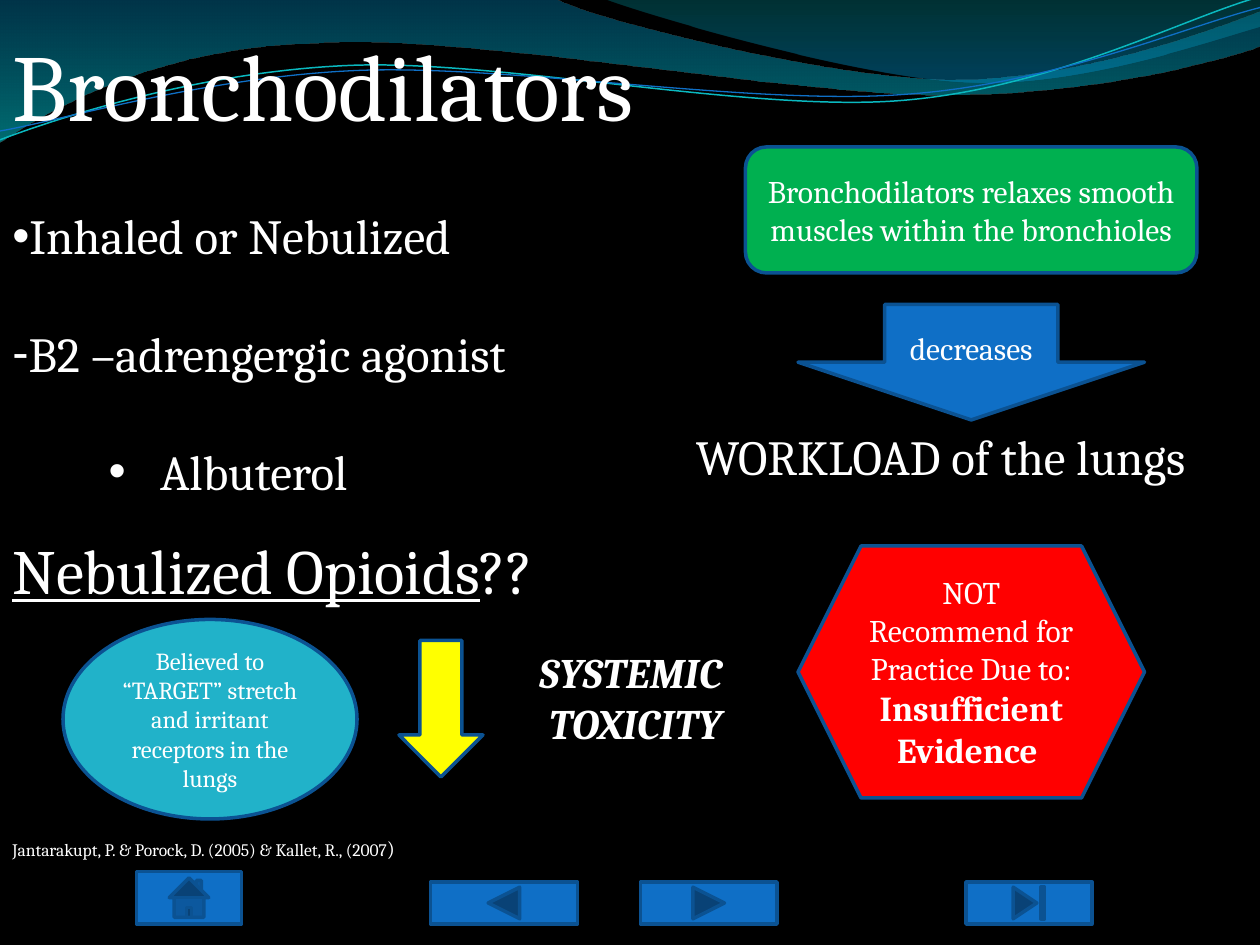
from dataclasses import dataclass
from typing import NamedTuple, Optional

import pptx
import pptx.dml.color
import pptx.enum.shapes
import pptx.enum.text
import pptx.oxml
import pptx.oxml.ns
import pptx.util

SHAPE = pptx.enum.shapes.MSO_SHAPE
ALIGN = pptx.enum.text.PP_ALIGN
ANCHOR = pptx.enum.text.MSO_ANCHOR
FIT = pptx.enum.text.MSO_AUTO_SIZE
COLUMNS, ROWS = 120, 90
CELL = pptx.util.Inches(10) // COLUMNS


@dataclass(frozen=True)
class Theme:
    font: str = "Cambria"
    background: str = "000000"
    text: str = "FFFFFF"
    blue: str = "0F6FC6"
    outline: str = "0B5292"
    teal: str = "21B2C9"
    yellow: str = "FFFF00"
    red: str = "FF0000"
    green: str = "00B050"
    aqua: str = "0AB8BF"
    title: int = 54
    heading: int = 36
    body: int = 28
    callout: int = 24
    strong: int = 20
    label: int = 18
    note: int = 14
    bracket: int = 12
    citation: int = 10


THEME = Theme()


class Box(NamedTuple):
    """Left, top, width and height in grid cells."""
    column: float
    row: float
    columns: float
    rows: float

    def emu(self) -> list[int]:
        return [round(cells * CELL) for cells in self]


class Run(NamedTuple):
    text: str
    size: int
    bold: bool = False
    italic: bool = False
    underline: bool = False


class Bullet(NamedTuple):
    """Bullet character with margin, hanging indent and gap above, in points."""
    char: str
    margin: float = 0
    hanging: float = 0
    gap: float = 0


class Line(NamedTuple):
    runs: list[Run]
    align: ALIGN = ALIGN.LEFT
    bullet: Optional[Bullet] = None


class Figure(NamedTuple):
    preset: SHAPE
    box: Box
    fill: str
    lines: list[Line] = []


class Note(NamedTuple):
    box: Box
    lines: list[Line]
    wrap: bool = False


class Stop(NamedTuple):
    position: int
    color: str
    opacity: int


class Wave(NamedTuple):
    """Points in inches: a start, then 2-tuples for lines and 6-tuples for Bezier curves."""
    start: tuple
    segments: list[tuple]
    stops: list[Stop] = []
    line: str = ""
    weight: float = 0


WAVES = [
    Wave((0, 0), [(4.4, -.01), (4.76, .17, 6.64, .63, 7.58, .63), (8.53, .63, 9.58, .26, 10, .09),
                  (10.01, .36), (9.83, .44, 8.7, .76, 7.46, .75), (6.22, .75, 3.82, .28, 2.57, .34),
                  (1.29, .36, .46, .83, -.01, 1.13), (0, 0)],
         [Stop(0, "0074A1", 45), Stop(100, "00C6CF", 55)]),
    Wave((4.79, -.01), [(5.09, .11, 6.82, .62, 7.69, .65), (8.56, .69, 9.61, .32, 10, .21),
                        (10, 0), (4.79, -.01)],
         [Stop(0, "00A1A9", 30), Stop(80, "008BBF", 45)]),
    Wave((0, 1.11), [(.48, .93, 1.58, .57, 2.77, .52), (3.95, .47, 5.93, .89, 7.13, .8),
                     (8.33, .71, 9.38, .15, 9.98, -.02)], line=THEME.aqua, weight=.85),
    Wave((0, 1.04), [(.47, .96, 1.64, .61, 2.83, .56), (4.03, .51, 5.97, .84, 7.17, .75),
                     (8.36, .67, 9.41, .21, 10, .06)], line=THEME.blue, weight=.75),
]


def centred(text: str, size: int, bold: bool = False, italic: bool = False) -> Line:
    return Line([Run(text, size, bold, italic)], ALIGN.CENTER)


BUTTONS = [
    Figure(SHAPE.ACTION_BUTTON_BACK_OR_PREVIOUS, Box(41, 84, 14, 4), THEME.blue),
    Figure(SHAPE.ACTION_BUTTON_FORWARD_OR_NEXT, Box(61, 84, 13, 4), THEME.blue),
    Figure(SHAPE.ACTION_BUTTON_END, Box(92, 84, 12, 4), THEME.blue),
    Figure(SHAPE.ACTION_BUTTON_HOME, Box(13, 83, 10, 5), THEME.blue),
]
TITLE = Note(Box(0, 2, 65.6, 12.1), [Line([Run("Bronchodilators", THEME.title)])])
CONTENT = [
    Note(Box(0, 19, 53, 40.8), [
        Line([Run("Inhaled or Nebulized", THEME.body)], bullet=Bullet("•")),
        Line([Run("B2 –adrengergic agonist", THEME.body)], bullet=Bullet("-", gap=33.7)),
        Line([Run("Albuterol", THEME.body)], bullet=Bullet("•", 84.5, 29.5, 33.7))], wrap=True),
    Figure(SHAPE.DOWN_ARROW, Box(76, 29, 33, 11), THEME.blue, [centred("decreases", THEME.label)]),
    Note(Box(65.1, 40, 54.9, 6.9), [Line([Run("WORKLOAD of the lungs", THEME.body)])]),
    Note(Box(0, 50, 56.9, 8.5), [Line([Run("Nebulized Opioids", THEME.heading, underline=True),
                                       Run("??", THEME.heading)])]),
    Figure(SHAPE.OVAL, Box(6, 59, 28, 19), THEME.teal,
           [centred("Believed to “TARGET” stretch and irritant receptors in the lungs", THEME.note)]),
    Figure(SHAPE.DOWN_ARROW, Box(38, 61, 8, 13), THEME.yellow),
    Note(Box(49, 61, 23, 10.9), [centred(word, THEME.callout, bold=True, italic=True)
                                 for word in ("SYSTEMIC ", "TOXICITY")]),
    Note(Box(0, 79, 42.1, 3.6), [
        Line([Run("Jantarakupt, P. & Porock, D. (2005) & Kallet, R., (2007", THEME.citation),
              Run(")", THEME.bracket)])]),
    Figure(SHAPE.HEXAGON, Box(76, 52, 33, 24), THEME.red,
           [centred("NOT Recommend for Practice Due to:", THEME.label),
            centred("Insufficient Evidence ", THEME.strong, bold=True)]),
    Figure(SHAPE.ROUNDED_RECTANGLE, Box(71, 14, 43, 12), THEME.green,
           [centred("Bronchodilators relaxes smooth muscles within the bronchioles", THEME.label)]),
]


def rgb(color: str) -> pptx.dml.color.RGBColor:
    return pptx.dml.color.RGBColor.from_string(color)


def xml(tag: str, attributes: str = "", content: str = ""):
    return pptx.oxml.parse_xml(
        f'<a:{tag} {pptx.oxml.ns.nsdecls("a")} {attributes}>{content}</a:{tag}>')


def add_bullet(paragraph, bullet: Bullet) -> None:
    paragraph.space_before = pptx.util.Pt(bullet.gap)
    properties = paragraph._p.get_or_add_pPr()
    properties.set("marL", str(pptx.util.Pt(bullet.margin)))
    properties.set("indent", str(-pptx.util.Pt(bullet.hanging)))
    properties.append(xml("buFont", 'typeface="Arial"'))
    properties.append(xml("buChar", f'char="{bullet.char}"'))


def write(frame, lines: list[Line], anchor: ANCHOR, wrap: bool, fit: FIT) -> None:
    frame.word_wrap, frame.auto_size, frame.vertical_anchor = wrap, fit, anchor
    frame.text = "\n".join(line.runs[0].text for line in lines)
    for paragraph, line in zip(frame.paragraphs, lines):
        paragraph.alignment = line.align
        if line.bullet:
            add_bullet(paragraph, line.bullet)
        for extra in line.runs[1:]:
            paragraph.add_run().text = extra.text
        for run, style in zip(paragraph.runs, line.runs):
            font = run.font
            font.name, font.size = THEME.font, pptx.util.Pt(style.size)
            font.bold, font.italic, font.underline = style.bold, style.italic, style.underline
            font.color.rgb = rgb(THEME.text)


def bend(ribbon, segments: list[tuple]) -> None:
    """Join the three straight steps of each 6-tuple into one Bezier curve."""
    steps = iter(list(ribbon._element.iter(pptx.oxml.ns.qn("a:lnTo"))))
    for segment in segments:
        first = next(steps)
        if len(segment) == 6:
            curve = xml("cubicBezTo")
            first.addprevious(curve)
            for step in (first, next(steps), next(steps)):
                curve.append(step[0])
                step.getparent().remove(step)


def draw_wave(slide, wave: Wave) -> None:
    inches = pptx.util.Inches
    points = [(inches(segment[i]), inches(segment[i + 1]))
              for segment in wave.segments for i in range(0, len(segment), 2)]
    builder = slide.shapes.build_freeform(*map(inches, wave.start))
    builder.add_line_segments(points, close=bool(wave.stops))
    ribbon = builder.convert_to_shape()
    bend(ribbon, wave.segments)
    ribbon.shadow.inherit = False
    if wave.stops:
        ribbon.line.fill.background()
        stops = "".join(
            f'<a:gs pos="{stop.position * 1000}"><a:srgbClr val="{stop.color}">'
            f'<a:alpha val="{stop.opacity * 1000}"/></a:srgbClr></a:gs>' for stop in wave.stops)
        ribbon._element.spPr.find(pptx.oxml.ns.qn("a:custGeom")).addnext(
            xml("gradFill", "", f'<a:gsLst>{stops}</a:gsLst><a:lin ang="5400000" scaled="0"/>'))
    else:
        ribbon.fill.background()
        ribbon.line.color.rgb = rgb(wave.line)
        ribbon.line.width = pptx.util.Pt(wave.weight)


def draw_figure(slide, figure: Figure) -> None:
    drawn = slide.shapes.add_shape(figure.preset, *figure.box.emu())
    drawn.shadow.inherit = False
    drawn.fill.solid()
    drawn.fill.fore_color.rgb = rgb(figure.fill)
    drawn.line.color.rgb = rgb(THEME.outline)
    drawn.line.width = pptx.util.Pt(2)
    if figure.lines:
        write(drawn.text_frame, figure.lines, ANCHOR.MIDDLE, True, FIT.NONE)


def draw_note(holder, note: Note) -> None:
    holder.left, holder.top, holder.width, holder.height = note.box.emu()
    write(holder.text_frame, note.lines, ANCHOR.TOP, note.wrap, FIT.SHAPE_TO_FIT_TEXT)


def main() -> None:
    deck = pptx.Presentation()
    deck.slide_width, deck.slide_height = COLUMNS * CELL, ROWS * CELL
    slide = deck.slides.add_slide(deck.slide_layouts[5])
    slide.background.fill.solid()
    slide.background.fill.fore_color.rgb = rgb(THEME.background)
    for wave in WAVES:
        draw_wave(slide, wave)
    for figure in BUTTONS:
        draw_figure(slide, figure)
    draw_note(slide.shapes.title, TITLE)
    slide.shapes._spTree.append(slide.shapes.title._element)  # in front of the waves
    for part in CONTENT:
        if isinstance(part, Figure):
            draw_figure(slide, part)
        else:
            draw_note(slide.shapes.add_textbox(*part.box.emu()), part)
    deck.save("out.pptx")


if __name__ == "__main__":
    main()
